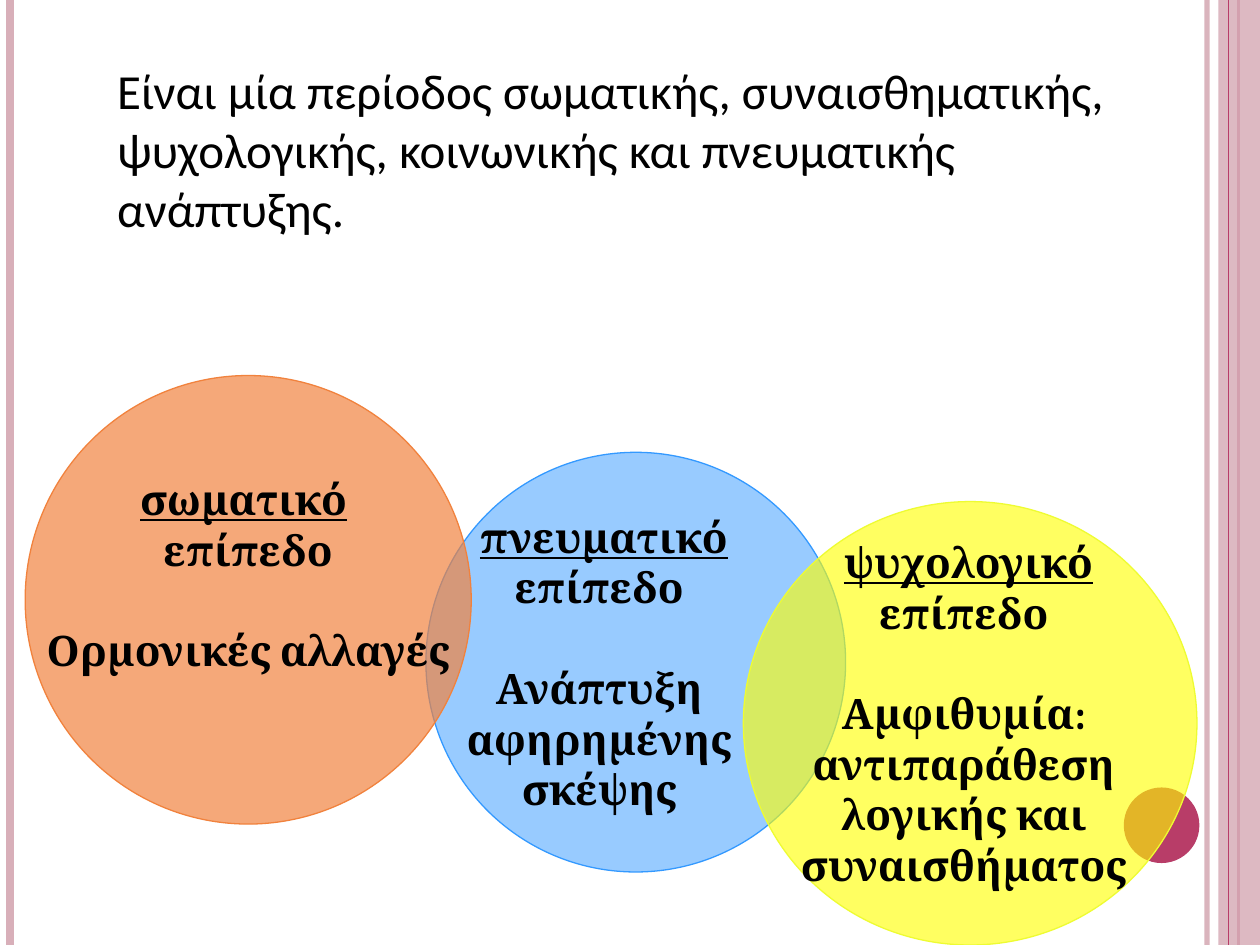
"""Build a slide on the levels of growth: overlapping discs beside a striped frame."""
from dataclasses import dataclass
from typing import Optional

from lxml.etree import SubElement
from pptx import Presentation
from pptx.dml.color import RGBColor
from pptx.enum.shapes import MSO_CONNECTOR as Link, MSO_SHAPE as Form
from pptx.enum.text import MSO_ANCHOR as Anchor, PP_ALIGN as Align
from pptx.oxml.ns import qn
from pptx.util import Pt

HUES = {
    "rose": "D8AFB9", "wine": "B83D68", "blue": "3399FF", "orange": "F1823D",
    "yellow": "FFFF00", "lemon": "EEFC32", "black": "000000",
}
WIDE, HIGH = 720, 540
GAP = 28.8


@dataclass
class Box:
    left: float
    top: float
    width: float
    height: float

    def points(self) -> list:
        return [Pt(v) for v in (self.left, self.top, self.width, self.height)]


@dataclass
class Stripe:
    x: float
    hue: str
    weight: float
    alpha: int = 100


@dataclass
class Disc:
    box: Box
    fill: str
    edge: str
    alpha: int
    lines: list
    label: Optional[Box] = None


STRIPES = [
    Stripe(689.8, "rose", 3, 93),
    Stripe(5.8, "rose", 4.5),
    Stripe(707.8, "wine", 1.5),
]
RULE = Stripe(702, "wine", 0.75)
BAND = Box(696.2, 0, 23.8, HIGH)
BALL = Box(642.2, 450, 43.2, 43.2)
INTRO = Box(59.8, 31, 589.7, 108.7)
DISCS = [
    Disc(Box(243.4, 258.5, 239.8, 239.8), "blue", "blue", 50,
         [" _πνευματικό _επίπεδο", "Ανάπτυξη αφηρημένης σκέψης"],
         Box(243.4, 288.7, 198, 181.4)),
    Disc(Box(14.4, 214.6, 254.9, 256.3), "orange", "orange", 69,
         ["_σωματικό_ ", "επίπεδο", "Ορμονικές αλλαγές"]),
    Disc(Box(424.8, 286.6, 259.2, 253.4), "yellow", "lemon", 62,
         [" _ψυχολογικό_ επίπεδο",
          "Αμφιθυμία: αντιπαράθεση λογικής και συναισθήματος"],
         Box(424.8, 303.1, 252, 211)),
]


def paint(fill, hue: str, alpha: int, props) -> None:
    fill.solid()
    fill.fore_color.rgb = RGBColor.from_string(HUES[hue])
    if alpha < 100:
        tint = next(props.iter(qn("a:srgbClr")))
        SubElement(tint, qn("a:alpha")).set("val", str(alpha * 1000))


def draw_line(slide, stripe: Stripe) -> None:
    line = slide.shapes.add_connector(
        Link.STRAIGHT, Pt(stripe.x), Pt(0), Pt(stripe.x), Pt(HIGH))
    props = line._element.spPr
    paint(line.line.fill, stripe.hue, stripe.alpha, props)
    line.line.width = Pt(stripe.weight)
    SubElement(props, qn("a:effectLst"))


def draw_shape(slide, form, box: Box, hue: str, alpha: int = 100, edge: str = ""):
    shape = slide.shapes.add_shape(form, *box.points())
    shape.shadow.inherit = False
    paint(shape.fill, hue, alpha, shape._element.spPr)
    if edge:
        paint(shape.line.fill, edge, 100, None)
        shape.line.width = Pt(0.75)
    else:
        shape.line.fill.background()
    return shape


def write(shape, lines: list, *, size: float, font: str, bold: bool = False,
          align=Align.LEFT, anchor=Anchor.TOP, wrap: bool = True,
          gap: float = 0, foot: float = 3.6) -> None:
    frame = shape.text_frame
    frame.word_wrap = wrap
    frame.vertical_anchor = anchor
    frame.margin_bottom = Pt(foot)
    for i, line in enumerate(lines):
        para = frame.paragraphs[0] if i == 0 else frame.add_paragraph()
        para.alignment = align
        if gap and i == len(lines) - 1:
            para.space_before = Pt(gap)
        for j, part in enumerate(line.split("_")):
            if not part:
                continue
            run = para.add_run()
            run.text = part
            run.font.size = Pt(size)
            run.font.name = font
            run.font.bold = bold
            run.font.underline = j % 2 == 1
            run.font.color.rgb = RGBColor.from_string(HUES["black"])


def draw_disc(slide, disc: Disc) -> None:
    shape = draw_shape(slide, Form.OVAL, disc.box, disc.fill, disc.alpha, disc.edge)
    look = dict(size=24, font="Cambria", bold=True, align=Align.CENTER, gap=GAP)
    if disc.label:
        write(slide.shapes.add_textbox(*disc.label.points()), disc.lines, **look)
    else:
        write(shape, disc.lines, anchor=Anchor.MIDDLE, wrap=False,
              foot=3.6 + GAP, **look)


def main() -> None:
    deck = Presentation()
    deck.slide_width, deck.slide_height = Pt(WIDE), Pt(HIGH)
    slide = deck.slides.add_slide(deck.slide_layouts[6])
    for stripe in STRIPES:
        draw_line(slide, stripe)
    draw_shape(slide, Form.RECTANGLE, BAND, "rose", 87)
    draw_line(slide, RULE)
    draw_shape(slide, Form.OVAL, BALL, "wine")
    for disc in DISCS:
        draw_disc(slide, disc)
    write(slide.shapes.add_textbox(*INTRO.points()),
          ["Είναι μία περίοδος σωματικής, συναισθηματικής, ψυχολογικής, "
           "κοινωνικής και πνευματικής ανάπτυξης."], size=28, font="Calibri")
    deck.save("out.pptx")


if __name__ == "__main__":
    main()
